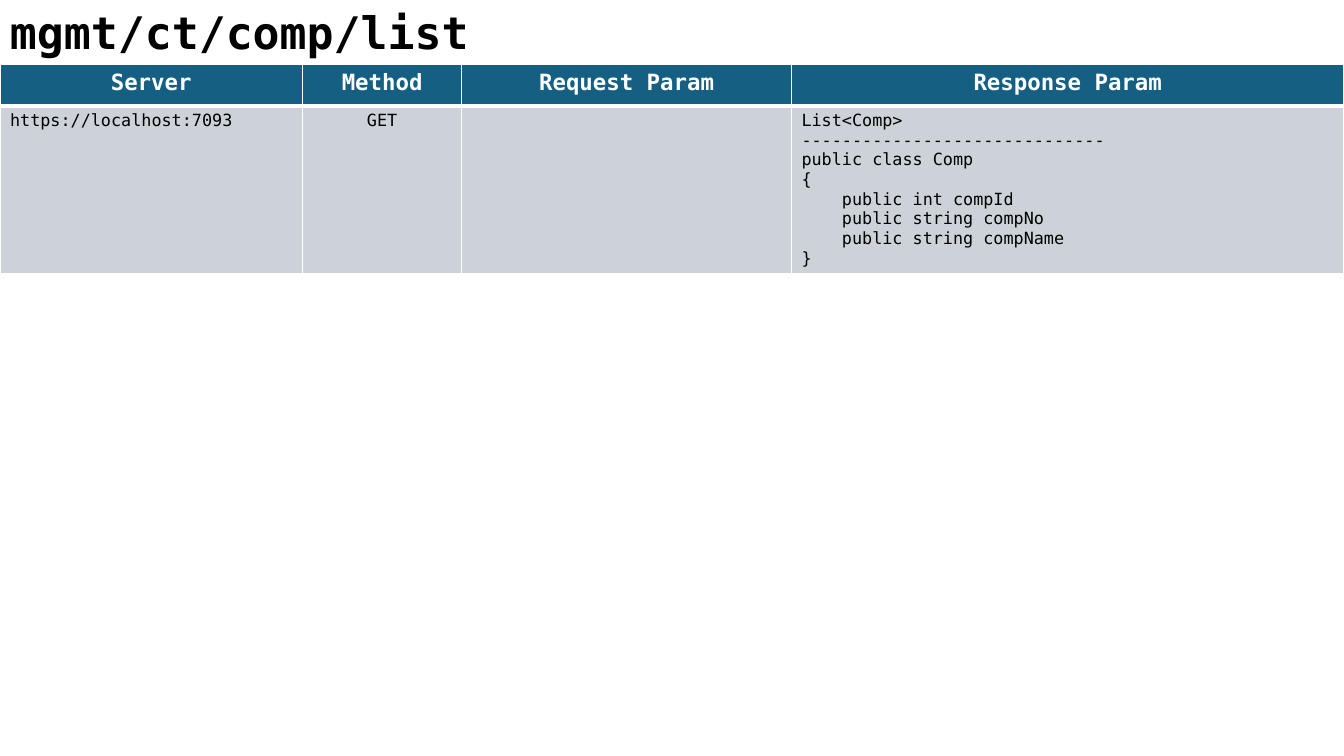
from lxml import etree
from pptx import Presentation
from pptx.dml.color import RGBColor
from pptx.enum import text
from pptx.oxml import ns
from pptx.util import Inches, Pt

FONT = "DejaVu Sans Mono"
CENTER, LEFT = text.PP_ALIGN.CENTER, text.PP_ALIGN.LEFT
HEADS = ["Server", "Method", "Request Param", "Response Param"]
COMP = """List<Comp>
------------------------------
public class Comp
{
    public int compId
    public string compNo
    public string compName
}"""
VALUES = ["https://localhost:7093", "GET", "", COMP]
WIDTHS = [3, 1.58, 3.27, 5.48]
HEIGHTS = [0.41, 1.65]


def color(code):
    return RGBColor.from_string(code)


def write(frame, words, size, ink, bold, align=LEFT):
    frame.text = words
    for line in frame.paragraphs:
        line.alignment = align
        line.font.name = FONT
        line.font.size = Pt(size)
        line.font.bold = bold
        line.font.color.rgb = color(ink)


def border(cell, edges):
    props = cell._tc.get_or_add_tcPr()
    for side, width in zip("LRTB", edges):
        line = etree.SubElement(props, ns.qn("a:ln" + side), w=str(Pt(width)))
        fill = etree.SubElement(line, ns.qn("a:solidFill"))
        etree.SubElement(fill, ns.qn("a:srgbClr"), val="FFFFFF")


def style(cell, words, size, ink, bold, align, back, edges):
    border(cell, edges)
    cell.fill.solid()
    cell.fill.fore_color.rgb = color(back)
    write(cell.text_frame, words, size, ink, bold, align)


def add_grid(slide):
    grid = slide.shapes.add_table(
        2, len(HEADS), Inches(0), Inches(0.64),
        Inches(sum(WIDTHS)), Inches(sum(HEIGHTS))).table
    for row, height in zip(grid.rows, HEIGHTS):
        row.height = Inches(height)
    for col, width in enumerate(WIDTHS):
        grid.columns[col].width = Inches(width)
        style(grid.cell(0, col), HEADS[col], 16, "FFFFFF", True, CENTER,
              "156082", (1, 1, 1, 3))
        align = CENTER if HEADS[col] == "Method" else LEFT
        style(grid.cell(1, col), VALUES[col], 12, "000000", False, align,
              "CCD2D8", (1, 1, 3, 1))


def add_title(slide, words):
    box = slide.shapes.add_textbox(
        Inches(0), Inches(0), Inches(6.39), Inches(0.64))
    box.text_frame.word_wrap = True
    write(box.text_frame, words, 32, "000000", True)


def main():
    deck = Presentation()
    deck.slide_width = Inches(13.33)
    deck.slide_height = Inches(7.5)
    slide = deck.slides.add_slide(deck.slide_layouts[6])
    add_grid(slide)
    add_title(slide, "mgmt/ct/comp/list")
    deck.save("out.pptx")


if __name__ == "__main__":
    main()
